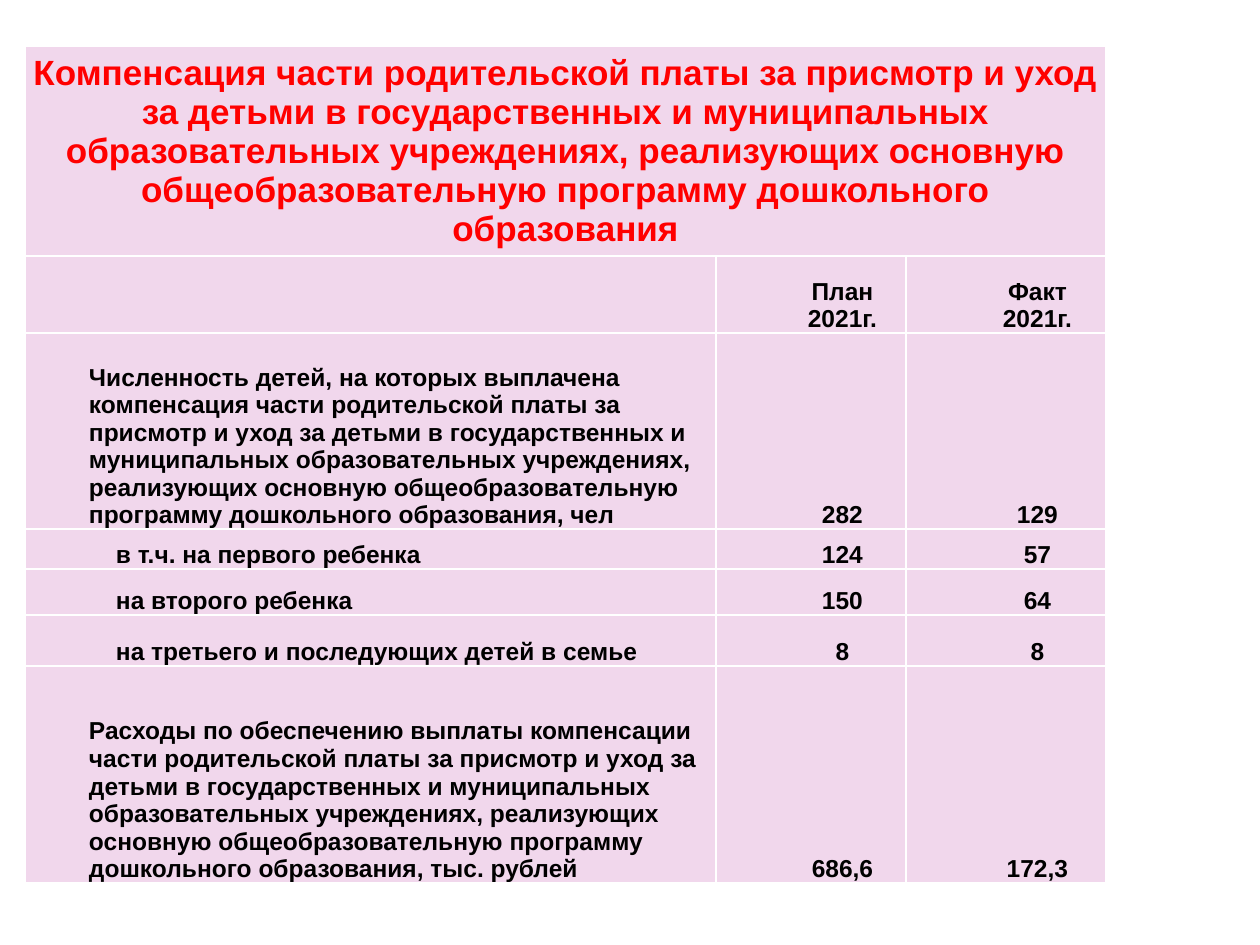
"""Build a slide with a table of childcare fee compensation, plan and fact for 2021."""
from lxml.etree import SubElement
from pptx import Presentation
from pptx.dml.color import RGBColor
from pptx.enum.text import MSO_ANCHOR as Anchor, PP_ALIGN as Align
from pptx.oxml.ns import qn
from pptx.util import Pt

PX = 914400 // 126
COLORS = {"fill": "F1D7EC", "title": "FF0000", "text": "000000", "border": "FFFFFF"}
LEFT, TOP = 25, 46
COLUMNS = [691, 190, 200]
HEIGHTS = [210, 77, 196, 40, 46, 51, 217]
INDENT, SUB_INDENT = 63, 90

TITLE = (
    "Компенсация части родительской платы за присмотр и уход за детьми "
    "в государственных и муниципальных образовательных учреждениях, "
    "реализующих основную общеобразовательную программу дошкольного образования"
)
ROWS = [
    ("", "План 2021г.", "Факт 2021г."),
    ("Численность детей, на которых выплачена компенсация части родительской "
     "платы за присмотр и уход за детьми в государственных и муниципальных "
     "образовательных учреждениях, реализующих основную общеобразовательную "
     "программу дошкольного образования, чел", "282", "129"),
    ("в т.ч. на первого ребенка", "124", "57"),
    ("на второго ребенка", "150", "64"),
    ("на третьего и последующих детей в семье", "8", "8"),
    ("Расходы по обеспечению выплаты компенсации части родительской платы за "
     "присмотр и уход за детьми в государственных и муниципальных "
     "образовательных учреждениях, реализующих основную общеобразовательную "
     "программу дошкольного образования, тыс. рублей", "686,6", "172,3"),
]
SUB_ROWS = range(3, 6)


def style_cell(cell):
    """Give a cell its margins, white borders and fill."""
    cell.margin_left = cell.margin_right = cell.margin_top = PX
    cell.margin_bottom = 0
    properties = cell._tc.get_or_add_tcPr()
    for side in ("a:lnL", "a:lnR", "a:lnT", "a:lnB"):
        line = SubElement(properties, qn(side), w=str(Pt(1)))
        solid = SubElement(line, qn("a:solidFill"))
        SubElement(solid, qn("a:srgbClr"), val=COLORS["border"])
    cell.fill.solid()
    cell.fill.fore_color.rgb = RGBColor.from_string(COLORS["fill"])


def write(cell, text, size=14, color="text", align=Align.CENTER,
          anchor=Anchor.BOTTOM, indent=INDENT):
    """Put formatted text in a cell."""
    cell.vertical_anchor = anchor
    para = cell.text_frame.paragraphs[0]
    para.alignment = align
    if indent:
        para.level = 1
        properties = para._p.get_or_add_pPr()
        properties.set("marL", str(indent * PX))
        properties.set("indent", "0")
    span = para.add_run()
    span.text = text
    span.font.name = "Arial"
    span.font.size = Pt(size)
    span.font.bold = True
    span.font.color.rgb = RGBColor.from_string(COLORS[color])


def main():
    """Build and save the deck."""
    deck = Presentation()
    deck.slide_width, deck.slide_height = 1260 * PX, 945 * PX
    page = deck.slides.add_slide(deck.slide_layouts[6])
    table = page.shapes.add_table(
        len(HEIGHTS), len(COLUMNS), LEFT * PX, TOP * PX,
        sum(COLUMNS) * PX, sum(HEIGHTS) * PX).table
    table.first_row = table.horz_banding = False
    for column, width in zip(table.columns, COLUMNS):
        column.width = width * PX
    for row, height in zip(table.rows, HEIGHTS):
        row.height = height * PX
    for cell in table.iter_cells():
        style_cell(cell)

    table.cell(0, 0).merge(table.cell(0, len(COLUMNS) - 1))
    write(table.cell(0, 0), TITLE, size=20, color="title",
          anchor=Anchor.MIDDLE, indent=0)
    for i, texts in enumerate(ROWS, start=1):
        for j, text in enumerate(texts):
            if text:
                write(table.cell(i, j), text,
                      align=Align.CENTER if j else Align.LEFT,
                      indent=SUB_INDENT if j == 0 and i in SUB_ROWS else INDENT)
    deck.save("out.pptx")


if __name__ == "__main__":
    main()
